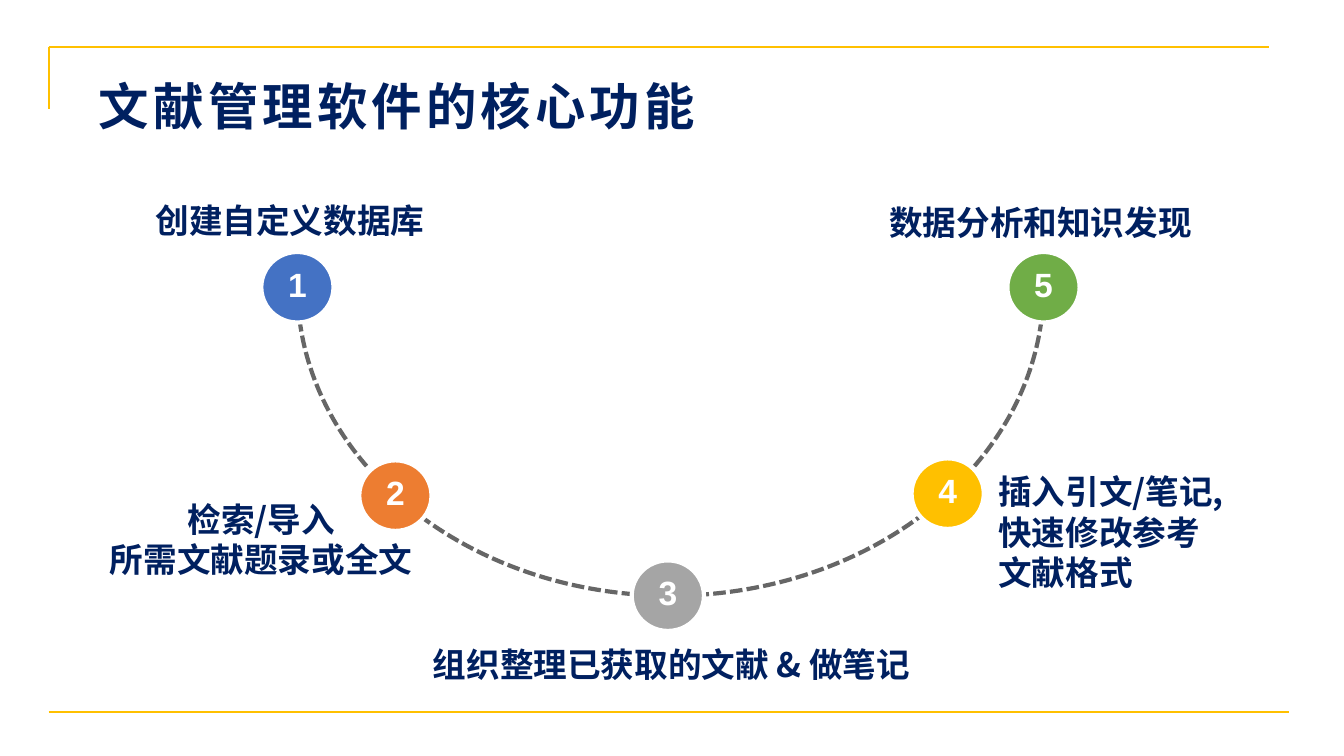
from math import cos, radians, sin

from lxml.etree import SubElement
from pptx import Presentation
from pptx.dml.color import RGBColor
from pptx.enum.dml import MSO_LINE
from pptx.enum.shapes import MSO_CONNECTOR, MSO_SHAPE
from pptx.enum.text import MSO_ANCHOR, MSO_AUTO_SIZE, PP_ALIGN
from pptx.oxml.ns import qn
from pptx.util import Inches, Pt

COLORS = {
    "navy": "002060", "gold": "FFC000", "dash": "666666", "white": "FFFFFF",
    "blue": "4472C4", "orange": "ED7D31", "gray": "A5A5A5", "green": "70AD47",
}
CJK_FONT = "Noto Sans CJK SC"
NUMBER_FONT = "Arial"

# The slide is a grid of 80 columns by 45 rows of square cells.
WIDTH, HEIGHT = Inches(13.33), Inches(7.5)
CELL = HEIGHT / 45

CENTER_X, CENTER_Y = 39.9, 17.1
RADIUS_X, RADIUS_Y = 22.2, 18.36
NODE_WIDTH, NODE_HEIGHT = 4.3, 4.2
INDENT = 1.86

# Start and end of each arc in degrees, before its half turn
ARCS = [(324.1, 0), (270.5, 322), (218.5, 269.4), (179.7, 217.5)]
# Angle on the curve and fill of nodes 1 to 5
NODES = [(180, "blue"), (137.5, "orange"), (90.4, "gray"), (42, "gold"), (0, "green")]
# Text, box (left, top, width, height) and format of labels 1 to 5
LABELS = [
    ("创建自定义数据库", (7.4, 12.85, 11.15, 1.45),
     {"anchor": MSO_ANCHOR.BOTTOM, "insets": (INDENT, 0, 0, 0)}),
    ("检索/导入\v所需文献题录或全文", (3, 30.65, 26.15, 2.9),
     {"align": PP_ALIGN.CENTER, "anchor": MSO_ANCHOR.MIDDLE, "insets": (0.8, 0, INDENT, 0)}),
    ("组织整理已获取的文献 & 做笔记", (24.55, 37.4, 30.8, 3.35),
     {"align": PP_ALIGN.CENTER, "anchor": MSO_ANCHOR.BOTTOM, "insets": (0, 0, 0, 0)}),
    ("插入引文/笔记,\n快速修改参考\n文献格式", (57.55, 32.15, 22.3, 3.1),
     {"anchor": MSO_ANCHOR.BOTTOM, "insets": (INDENT, 0, 0, 0)}),
    ("数据分析和知识发现", (51.5, 10.55, 22, 5.3),
     {"align": PP_ALIGN.CENTER, "anchor": MSO_ANCHOR.MIDDLE, "insets": (0.7, 0, INDENT, 0)}),
]


def cells(*counts):
    return [round(count * CELL) for count in counts]


def color(name):
    return RGBColor.from_string(COLORS[name])


def add_text(slide, text, box, *, size=24, font=CJK_FONT, fill="navy", align=PP_ALIGN.LEFT,
             anchor=MSO_ANCHOR.TOP, insets=None, wrap=False, grow=False,
             line_spacing=None, tracking=None):
    """Add a bold text box; box and insets are in grid cells, tracking in points."""
    frame = slide.shapes.add_textbox(*cells(*box)).text_frame
    frame.text = text
    frame.word_wrap = wrap
    frame.auto_size = MSO_AUTO_SIZE.SHAPE_TO_FIT_TEXT if grow else MSO_AUTO_SIZE.NONE
    frame.vertical_anchor = anchor
    if insets:
        (frame.margin_left, frame.margin_top,
         frame.margin_right, frame.margin_bottom) = cells(*insets)
    for paragraph in frame.paragraphs:
        paragraph.alignment = align
        if line_spacing:
            paragraph.line_spacing = Pt(line_spacing)
        for run in paragraph.runs:
            run.font.size = Pt(size)
            run.font.bold = True
            run.font.color.rgb = color(fill)
            run.font.name = font
            properties = run.font._element
            SubElement(properties, qn("a:ea")).set("typeface", font)
            if tracking:
                properties.set("spc", str(tracking * 100))


def add_rule(slide, *ends):
    rule = slide.shapes.add_connector(MSO_CONNECTOR.STRAIGHT, *cells(*ends))
    rule.line.color.rgb = color("gold")
    rule.line.width = Pt(1.5)
    SubElement(rule._element.spPr, qn("a:effectLst"))


def add_arc(slide, start, end):
    box = cells(CENTER_X - RADIUS_X, CENTER_Y - RADIUS_Y, 2 * RADIUS_X, 2 * RADIUS_Y)
    arc = slide.shapes.add_shape(MSO_SHAPE.ARC, *box)
    # An adjustment of 0.6 is one degree.
    arc.adjustments[0] = start * 0.6
    arc.adjustments[1] = end * 0.6
    arc.rotation = 180
    arc.shadow.inherit = False
    arc.fill.background()
    arc.line.color.rgb = color("dash")
    arc.line.width = Pt(3)
    arc.line.dash_style = MSO_LINE.SQUARE_DOT


def add_node(slide, number, angle, fill):
    """Add a numbered circle at an angle on the curve."""
    x = CENTER_X + RADIUS_X * cos(radians(angle))
    y = CENTER_Y + RADIUS_Y * sin(radians(angle))
    box = cells(x - NODE_WIDTH / 2, y - NODE_HEIGHT / 2, NODE_WIDTH, NODE_HEIGHT)
    node = slide.shapes.add_shape(MSO_SHAPE.OVAL, *box)
    node.shadow.inherit = False
    node.fill.solid()
    node.fill.fore_color.rgb = color(fill)
    node.line.color.rgb = color("white")
    node.line.width = Pt(3)
    add_text(slide, str(number), (x - 1.15, y - 0.55, 2.3, 1.85), font=NUMBER_FONT,
             fill="white", align=PP_ALIGN.CENTER, grow=True, line_spacing=15)


def main():
    presentation = Presentation()
    presentation.slide_width, presentation.slide_height = WIDTH, HEIGHT
    slide = presentation.slides.add_slide(presentation.slide_layouts[6])

    add_rule(slide, 2.9, 2.8, 75.5, 2.8)
    add_rule(slide, 2.9, 2.8, 2.9, 6.5)
    add_rule(slide, 2.9, 42.4, 76.7, 42.4)
    add_text(slide, "文献管理软件的核心功能", (5.3, 4.15, 37, 4.25),
             size=36, wrap=True, grow=True, tracking=3)

    for start, end in ARCS:
        add_arc(slide, start, end)
    for number, (angle, fill) in enumerate(NODES, 1):
        add_node(slide, number, angle, fill)
    for text, box, text_format in LABELS:
        add_text(slide, text, box, **text_format)

    presentation.save("out.pptx")


if __name__ == "__main__":
    main()
